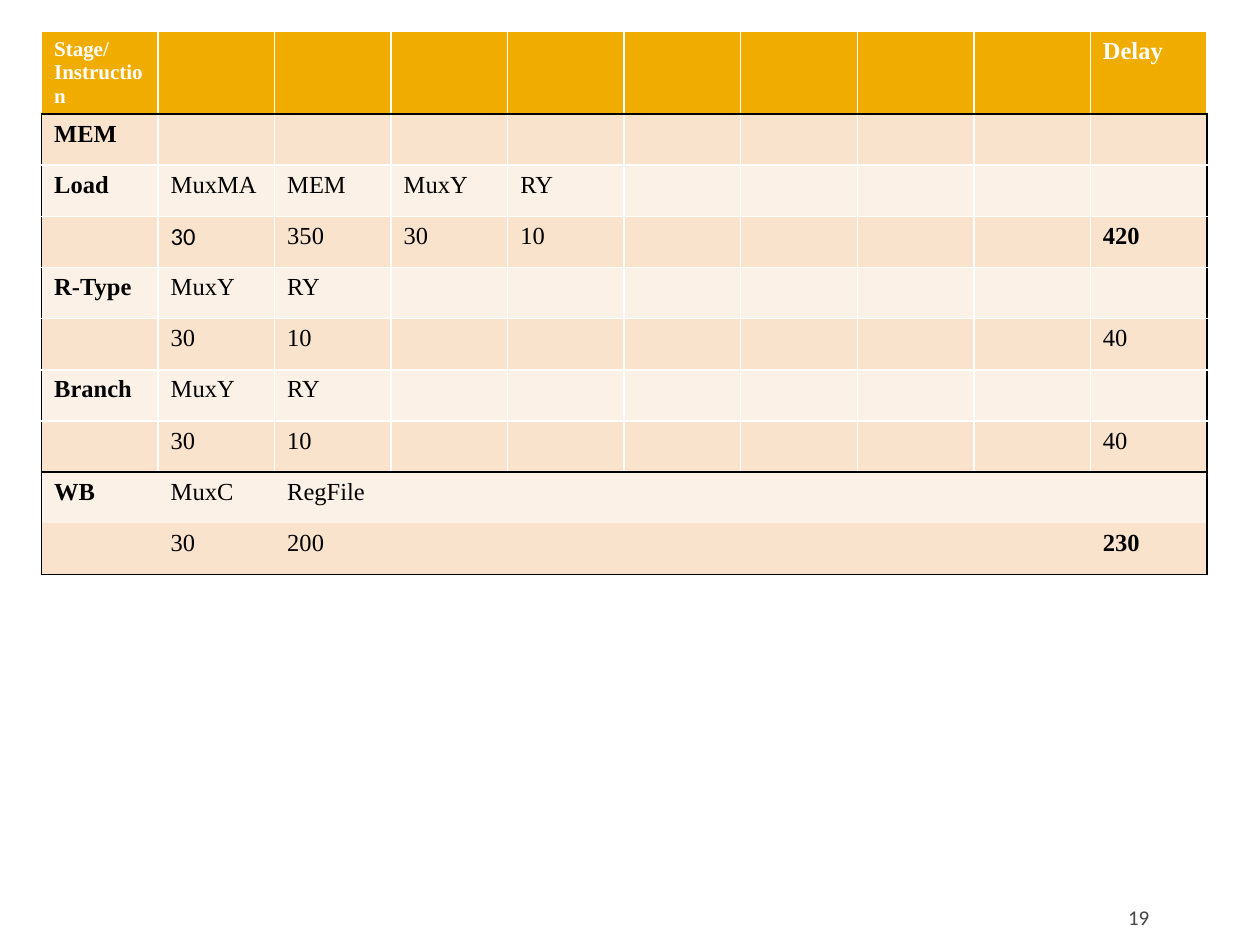
from lxml.etree import SubElement
from pptx import Presentation
from pptx.dml.color import RGBColor
from pptx.enum.text import MSO_ANCHOR, PP_ALIGN
from pptx.oxml.ns import qn
from pptx.util import Inches, Pt


def style(run, color, **form):
    """Set font values and colour on a run."""
    for key, val in form.items():
        setattr(run.font, key, val)
    run.font.color.rgb = RGBColor.from_string(color)


def edge(cell, side, color):
    """Draw one cell border, or clear it when there is no colour."""
    line = SubElement(cell._tc.get_or_add_tcPr(), qn("a:ln" + side), w=str(Pt(1)))
    if color:
        fill = SubElement(line, qn("a:solidFill"))
        SubElement(fill, qn("a:srgbClr"), val=color)
    else:
        SubElement(line, qn("a:noFill"))


WHITE, BLACK, GOLD, GREY = "FFFFFF", "000000", "F0AD00", "454545"
BANDS = ["FCF1E7", "F9E3CC"]
SERIF, SANS = "Times New Roman", "Calibri"

# Stage steps of each row, and its total delay
ROWS = [
    (["Stage/Instruction"], "Delay"),
    (["MEM"], ""),
    (["Load", "MuxMA", "MEM", "MuxY", "RY"], ""),
    (["", "30", "350", "30", "10"], "420"),
    (["R-Type", "MuxY", "RY"], ""),
    (["", "30", "10"], "40"),
    (["Branch", "MuxY", "RY"], ""),
    (["", "30", "10"], "40"),
    (["WB", "MuxC", "RegFile"], ""),
    (["", "30", "200"], "230"),
]
COLS = 10
LAST = COLS - 1
WB = 8  # first row of the write-back block
RULES = {1, WB, len(ROWS)}  # rows with a black rule above them
PEAKS = {"420", "230"}  # longest delay of each stage

# Slide
deck = Presentation()
deck.slide_width, deck.slide_height = Inches(10), Inches(7.5)
wide, high = deck.slide_width, deck.slide_height
slide = deck.slides.add_slide(deck.slide_layouts[6])

# Delay table
frame = slide.shapes.add_table(
    len(ROWS), COLS, Inches(0.33), Inches(0.25), Inches(9.25), Inches(4.06))
table = frame.table

for r, (steps, delay) in enumerate(ROWS):
    words = steps + [""] * (LAST - len(steps)) + [delay]
    for c, word in enumerate(words):
        cell = table.cell(r, c)

        # Borders: black frame and rules, white grid, open write-back block
        grid = None if r >= WB else WHITE
        sides = {
            "L": BLACK if r and c == 0 else grid,
            "R": BLACK if r and c == LAST else grid,
            "T": BLACK if r in RULES else grid,
            "B": BLACK if r + 1 in RULES else grid,
        }
        for side, color in sides.items():
            edge(cell, side, color)

        # Fill
        cell.fill.solid()
        cell.fill.fore_color.rgb = RGBColor.from_string(BANDS[r % 2] if r else GOLD)

        # Text
        if word:
            run = cell.text_frame.paragraphs[0].add_run()
            run.text = word
            style(run, BLACK if r else WHITE,
                  name=SANS if (r, c) == (3, 1) else SERIF,
                  size=Pt(12 if r == c == 0 else 14),
                  bold=r == 0 or c == 0 or word in PEAKS)

# Page number
box = slide.shapes.add_textbox(
    int(wide * 0.842), int(high * 0.944), int(wide * 0.08), int(high * 0.04))
text = box.text_frame
form = {"word_wrap": True, "vertical_anchor": MSO_ANCHOR.BOTTOM, "margin_bottom": 0}
for key, val in form.items():
    setattr(text, key, val)
para = text.paragraphs[0]
para.alignment = PP_ALIGN.RIGHT
run = para.add_run()
run.text = "19"
style(run, GREY, name=SANS, size=Pt(12))

deck.save("out.pptx")
